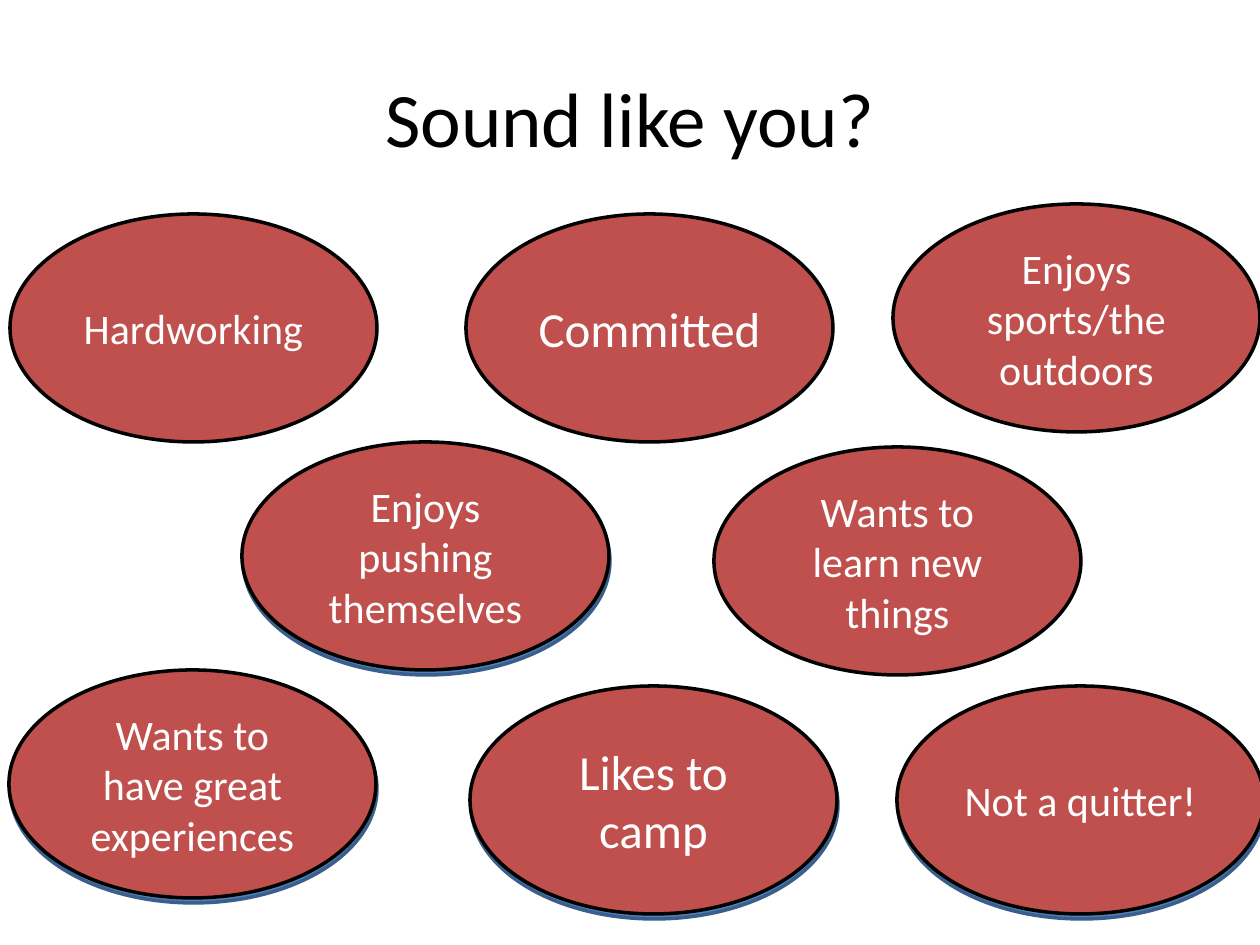
from pptx import Presentation, util as u
from pptx.dml.color import RGBColor
from pptx.enum import shapes, text

PX = u.Inches(1) / 126
RED = RGBColor(0xC0, 0x50, 0x4D)
BLUE = RGBColor(0x4F, 0x81, 0xBD)
NAVY = RGBColor(0x3A, 0x5F, 0x8C)
BLACK = RGBColor(0, 0, 0)
WHITE = RGBColor(255, 255, 255)
OVAL_WIDTH, OVAL_HEIGHT = 367, 228


def px(n):
    return u.Emu(round(n * PX))


def add_oval(left, top, fill, outline):
    oval = slide.shapes.add_shape(
        shapes.MSO_SHAPE.OVAL, px(left), px(top), px(OVAL_WIDTH), px(OVAL_HEIGHT))
    oval.shadow.inherit = False
    oval.fill.solid()
    oval.fill.fore_color.rgb = fill
    oval.line.color.rgb = outline
    oval.line.width = u.Pt(2)
    return oval


prs = Presentation()
prs.slide_width, prs.slide_height = px(1260), px(945)
slide = prs.slides.add_slide(prs.slide_layouts[6])

heading = slide.shapes.add_textbox(px(63), px(38), px(1134), px(157))
heading.text_frame.text = "Sound like you?"
labels = [(heading, 44, BLACK)]

traits = [
    ("Hardworking", 10, 214, 24, False),
    ("Committed", 466, 214, 28, False),
    ("Wants to learn new things", 714, 447, 24, False),
    ("Enjoys sports/the outdoors", 893, 204, 24, False),
    ("Enjoys pushing themselves", 242, 442, 24, True),
    ("Wants to have great experiences", 9, 670, 24, True),
    ("Likes to camp", 470, 686, 28, True),
    ("Not a quitter!", 897, 686, 24, True),
]
for trait, left, top, size, has_backing in traits:
    if has_backing:
        add_oval(left + 1, top + 5, BLUE, NAVY)
    oval = add_oval(left, top, RED, BLACK)
    oval.text_frame.text = trait
    labels.append((oval, size, WHITE))

for label, size, color in labels:
    frame = label.text_frame
    frame.word_wrap = True
    frame.vertical_anchor = text.MSO_ANCHOR.MIDDLE
    paragraph = frame.paragraphs[0]
    paragraph.alignment = text.PP_ALIGN.CENTER
    font = paragraph.runs[0].font
    font.name = "Calibri"
    font.size = u.Pt(size)
    font.color.rgb = color

prs.save("out.pptx")
